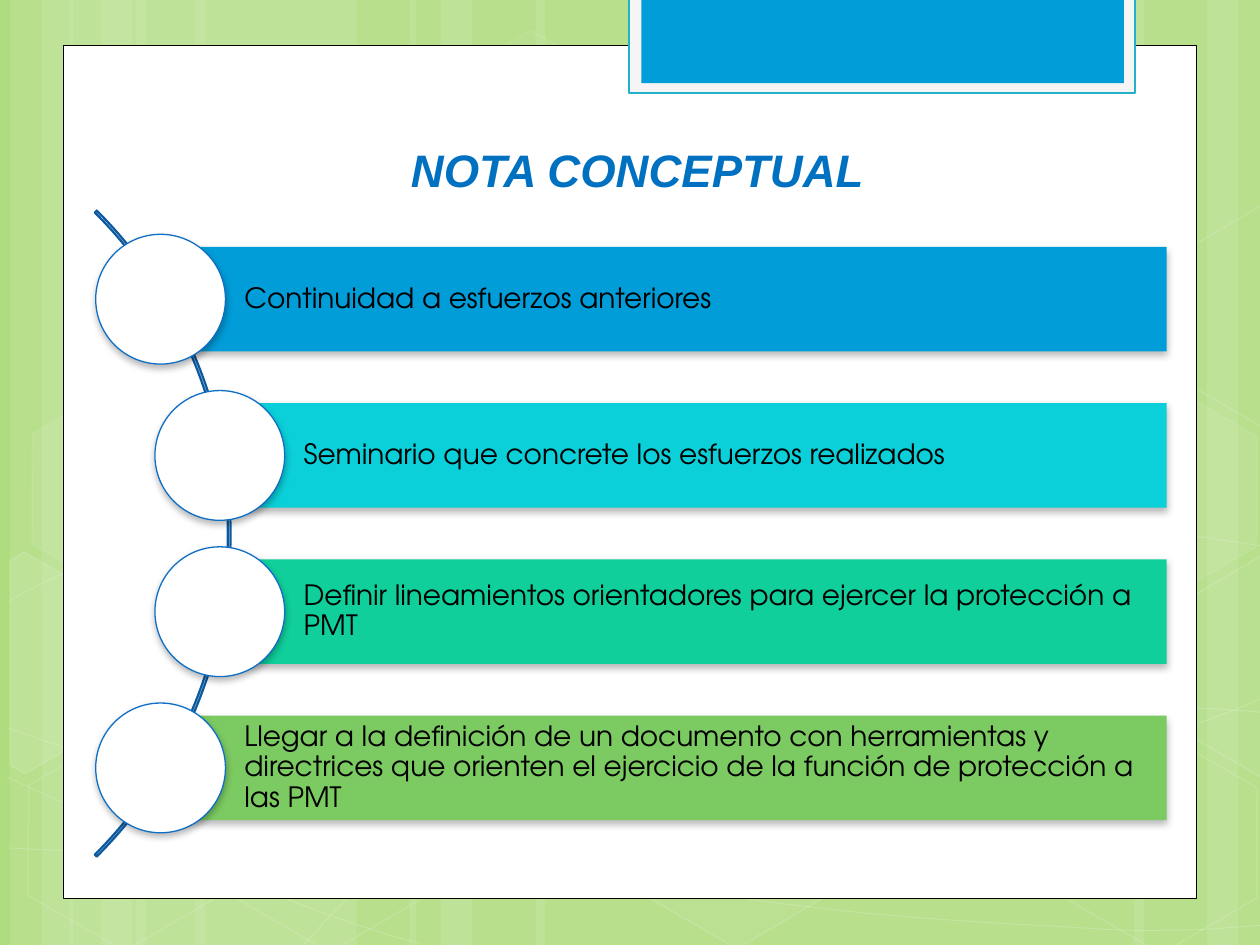
from lxml import etree
from math import cos, radians, sin
from pptx import Presentation
from pptx.dml.color import RGBColor
from pptx.enum.shapes import MSO_SHAPE as Kind
from pptx.enum.text import MSO_ANCHOR as Anchor, PP_ALIGN as Align
from pptx.oxml.ns import qn
from pptx.util import Inches, Pt

WHITE = RGBColor(0xFF, 0xFF, 0xFF)
BLACK = RGBColor(0, 0, 0)
BACK = RGBColor(0xAF, 0xDC, 0x7F)
PALE = RGBColor(0xF5, 0xF5, 0xF5)
TEAL = RGBColor(0x21, 0xB2, 0xC9)
BLUE = RGBColor(0x00, 0x9D, 0xD9)
CYAN = RGBColor(0x0B, 0xD0, 0xD9)
MINT = RGBColor(0x10, 0xCF, 0x9B)
GREEN = RGBColor(0x7C, 0xCA, 0x62)
RING = RGBColor(0x0F, 0x6F, 0xC6)
NAVY = RGBColor(0x0C, 0x59, 0x9F)
TITLE = RGBColor(0x00, 0x70, 0xC0)

prs = Presentation()
prs.slide_width, prs.slide_height = Inches(10), Inches(7.5)
slide = prs.slides.add_slide(prs.slide_layouts[6])
slide.background.fill.solid()
slide.background.fill.fore_color.rgb = BACK
shapes = slide.shapes


def paint(shape, fill=None, line=None, width=1, clear=100, faint=100):
    """Set fill and line; clear and faint are their opacities in percent."""
    shape.shadow.inherit = False
    props = shape.element.spPr
    for part, color, alpha, tag in (
        (shape.fill, fill, clear, "a:solidFill"),
        (shape.line.fill, line, faint, "a:ln/a:solidFill"),
    ):
        if color is None:
            part.background()
            continue
        part.solid()
        part.fore_color.rgb = color
        if alpha < 100:
            node = props.find("/".join(qn(name) for name in tag.split("/")))
            etree.SubElement(node[0], qn("a:alpha"), val=str(alpha * 1000))
    if line is not None:
        shape.line.width = Pt(width)
    return shape


def add(kind, left, top, wide, high):
    return shapes.add_shape(kind, Inches(left), Inches(top), Inches(wide), Inches(high))


# Background stripes
for left, wide in (
    (1.08, 1.75), (0.08, 0.5), (0.33, 0.83), (1.55, 1.75), (0.55, 0.5), (0.8, 0.83),
    (7.33, 1.75), (9.58, 0.5), (9, 0.83), (4.25, 3.08), (3.25, 0.5), (3.5, 0.83),
):
    paint(add(Kind.RECTANGLE, left, 0, wide, 7.5), WHITE, clear=10)

# Background waves: a start point, then two handles and an end for each curve
waves = [
    [(0.07, 6.73), (0.61, 6.76), (1.15, 6.79), (1.9, 6.78), (2.65, 6.77), (3.58, 6.75),
     (4.58, 6.65), (5.58, 6.55), (7, 6.36), (7.92, 6.17), (8.83, 5.98), (9.77, 5.68), (10.07, 5.51)],
    [(0.07, 4.77), (0.36, 4.61), (0.65, 4.46), (1.21, 4.31), (1.78, 4.16), (2.59, 3.94),
     (3.47, 3.87), (4.36, 3.8), (5.44, 3.79), (6.54, 3.87), (7.64, 3.95), (9.47, 4.26), (10.07, 4.34)],
    [(0.06, 6.17), (1.27, 6.72), (2.47, 7.27), (3.34, 7.49)],
    [(0.07, 5.78), (0.38, 5.89), (0.7, 6), (1.28, 6.16), (1.86, 6.31), (2.73, 6.56),
     (3.57, 6.73), (4.4, 6.9), (5.45, 7.08), (6.28, 7.18), (7.11, 7.29), (8, 7.33),
     (8.53, 7.36), (9.05, 7.4), (9.19, 7.38), (9.45, 7.38), (9.71, 7.37), (9.89, 7.35), (10.07, 7.34)],
    [(2.42, 7.49), (2.6, 7.29), (2.78, 7.09), (3.02, 6.91), (3.26, 6.73), (3.6, 6.53),
     (3.88, 6.39), (4.16, 6.25), (4.33, 6.19), (4.7, 6.09), (5.06, 5.99), (5.73, 5.85),
     (6.08, 5.78), (6.44, 5.71), (6.49, 5.71), (6.8, 5.69), (7.11, 5.66), (7.6, 5.63),
     (7.94, 5.62), (8.29, 5.61), (8.86, 5.62), (8.86, 5.62), (9.08, 5.62), (9.31, 5.62),
     (9.53, 5.62), (9.71, 5.63), (9.88, 5.64), (9.97, 5.65), (10.06, 5.66), (10.03, 5.65), (10.06, 5.66)],
]
for wave in waves:
    dots = [(Inches(x), Inches(y)) for x, y in wave]
    pen = shapes.build_freeform(*dots[0])
    pen.add_line_segments(dots[1:], close=False)
    curve = paint(pen.convert_to_shape(), None, WHITE, 0.5, faint=20)
    # Turn every three line points into one Bezier segment
    track = next(curve.element.iter(qn("a:path")))
    steps = track.findall(qn("a:lnTo"))
    for i in range(0, len(steps), 3):
        bend = etree.SubElement(track, qn("a:cubicBezTo"))
        for step in steps[i:i + 3]:
            bend.append(step[0])
            track.remove(step)

# Background hexagons: left, top, fill opacity, line opacity
TURN = 30
for left, top, clear, faint in (
    (3.34, 0.36, 4, 8), (4.97, 5.89, 6, 12), (0.11, 5.91, 0, 12),
    (0.14, 3.12, 7, 8), (1.74, 5.92, 0, 12), (7.53, 4.53, 10, 12),
    (8.34, 5.93, 0, 12), (8.34, 3.14, 7, 8),
):
    hexagon = add(Kind.HEXAGON, left, top, 1.75, 1.52)
    hexagon.adjustments[0] = 0.285
    hexagon.rotation = TURN
    paint(hexagon, WHITE if clear else None, WHITE, 1, clear, faint)

# Hexagons cut off by the slide edge: centre, fill opacity, corners after the turn
COS, SIN = cos(radians(TURN)), sin(radians(TURN))
for mid, high, clear, corners in (
    (0.36, 5.35, 10, [(0.08, 4.45), (0.19, 4.38), (0.96, 4.82), (0.95, 5.7), (0.2, 6.14), (0.08, 6.07)]),
    (9.85, 5.2, 4, [(9.26, 4.85), (10.01, 4.41), (10.09, 4.46), (10.09, 6.13), (10.02, 6.17), (9.26, 5.73)]),
    (9.85, 2.41, 0, [(9.26, 2.07), (10.01, 1.63), (10.1, 1.68), (10.09, 3.35), (10.02, 3.39), (9.26, 2.95)]),
):
    dots = [(Inches(mid + (x - mid) * COS + (y - high) * SIN),
             Inches(high - (x - mid) * SIN + (y - high) * COS)) for x, y in corners]
    pen = shapes.build_freeform(*dots[0])
    pen.add_line_segments(dots[1:], close=True)
    part = paint(pen.convert_to_shape(), WHITE if clear else None, WHITE, 1, clear, 12)
    part.rotation = TURN

# Page panel and top tab
paint(add(Kind.RECTANGLE, 0.5, 0.36, 9, 6.77), WHITE, BLACK, 0.5)
paint(add(Kind.RECTANGLE, 4.99, -0.02, 4.02, 0.76), PALE, TEAL, 1.25)
paint(add(Kind.RECTANGLE, 5.09, -0.02, 3.83, 0.68), BLUE)

# Title
box = shapes.add_textbox(Inches(1.22), Inches(1.07), Inches(7.68), Inches(0.54))
frame = box.text_frame
frame.word_wrap = True
frame.vertical_anchor = Anchor.BOTTOM
frame.text = "NOTA CONCEPTUAL"
frame.paragraphs[0].alignment = Align.CENTER
font = frame.paragraphs[0].runs[0].font
font.name, font.size, font.bold, font.italic = "Arial", Pt(26), True, True
font.color.rgb = TITLE

# Arc behind the list
arc = add(Kind.BLOCK_ARC, -5.42, 0.61, 7.25, 7.25)
for i, value in enumerate((189, 27, 0.003)):
    arc.adjustments[i] = value
paint(arc, None, NAVY, 1.25)

# List bars with their circles
RIGHT, TOP, PITCH = 9.26, 1.96, 1.24
rows = [
    (1.28, BLUE, "Continuidad a esfuerzos anteriores"),
    (1.75, CYAN, "Seminario que concrete los esfuerzos realizados"),
    (1.75, MINT, "Definir lineamientos orientadores para ejercer la protección a PMT"),
    (1.28, GREEN, "Llegar a la definición de un documento con herramientas y directrices "
                  "que orienten el ejercicio de la función de protección a las PMT"),
]
for i, (left, color, text) in enumerate(rows):
    top = TOP + i * PITCH
    bar = paint(add(Kind.RECTANGLE, left, top, RIGHT - left, 0.83), color)
    ring = paint(add(Kind.OVAL, left - 0.52, top - 0.1, 1.03, 1.03), WHITE, RING, 0.75)
    for shape in (bar, ring):
        glow = etree.SubElement(
            shape.element.spPr.find(qn("a:effectLst")), qn("a:outerShdw"),
            blurRad=str(Pt(4)), dist=str(Pt(2)), dir="5400000", rotWithShape="0")
        tint = etree.SubElement(glow, qn("a:srgbClr"), val=str(BLACK))
        etree.SubElement(tint, qn("a:alpha"), val="28000")
    frame = bar.text_frame
    frame.word_wrap = True
    frame.vertical_anchor = Anchor.MIDDLE
    frame.margin_left = Inches(0.66)
    frame.margin_top = frame.margin_right = frame.margin_bottom = Inches(0.04)
    frame.text = text
    line = frame.paragraphs[0]
    line.alignment, line.line_spacing = Align.LEFT, 0.9
    font = line.runs[0].font
    font.name, font.size = "TeX Gyre Adventor", Pt(16)
    font.color.rgb = BLACK

prs.save("out.pptx")
